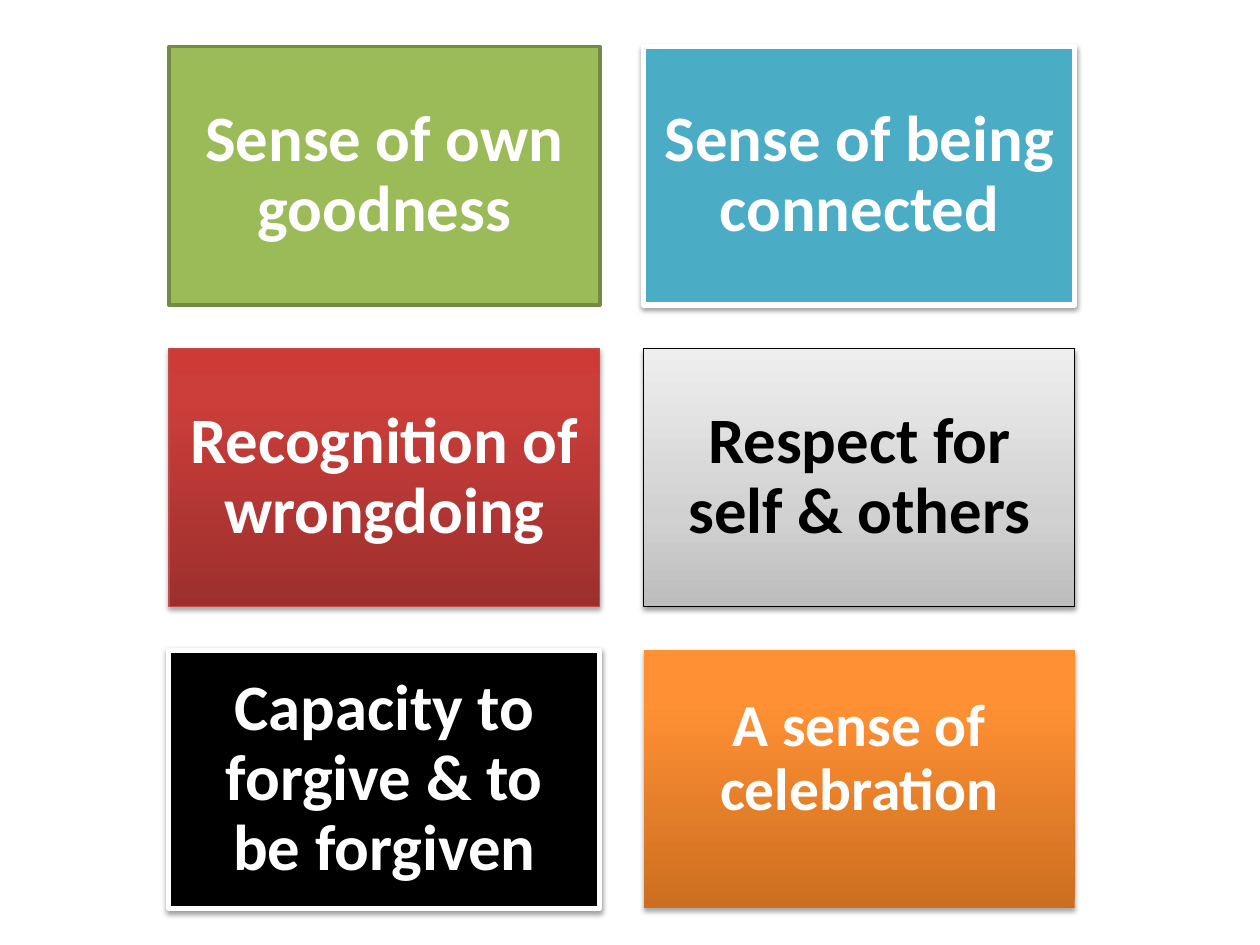
from copy import deepcopy

from lxml import etree
from pptx import Presentation
from pptx.dml.color import RGBColor
from pptx.enum.shapes import MSO_SHAPE
from pptx.enum.text import MSO_ANCHOR, PP_ALIGN
from pptx.oxml.ns import qn
from pptx.util import Inches, Pt

RECT = MSO_SHAPE.RECTANGLE
MIDDLE = MSO_ANCHOR.MIDDLE
CENTER = PP_ALIGN.CENTER

WHITE = RGBColor(0xFF, 0xFF, 0xFF)
BLACK = RGBColor(0x00, 0x00, 0x00)
GREEN = RGBColor(0x9B, 0xBB, 0x59)
DARK_GREEN = RGBColor(0x73, 0x8A, 0x42)
TEAL = RGBColor(0x4B, 0xAC, 0xC6)
RED_EDGE = RGBColor(0xBF, 0x4C, 0x48)
RED_STOPS = [(0, RGBColor(0x9C, 0x2F, 0x2D)), (0.8, RGBColor(0xCB, 0x3E, 0x3A)),
             (1, RGBColor(0xCE, 0x3B, 0x37))]
GRAY_STOPS = [(0, RGBColor(0xBD, 0xBD, 0xBD)), (0.35, RGBColor(0xD1, 0xD1, 0xD1)),
              (1, RGBColor(0xEE, 0xEE, 0xEE))]
ORANGE_STOPS = [(0, RGBColor(0xCC, 0x6E, 0x20)), (0.8, RGBColor(0xFF, 0x90, 0x34)),
                (1, RGBColor(0xFF, 0x91, 0x36))]

COLS = 2
LEFT, TOP = 1.34, 0.37
TILE_W, TILE_H = 3.42, 2.05
STEP_X, STEP_Y = 3.77, 2.395
SOFT = {"alpha": 38, "dist": 1.6}
DEEP = {"alpha": 35, "dist": 1.8}

TILES = [
    {"text": "Sense of own goodness", "fill": GREEN, "line": (DARK_GREEN, 2)},
    {"text": "Sense of being connected", "fill": TEAL, "line": (WHITE, 3), "shadow": SOFT},
    {"text": "Recognition of wrongdoing", "fill": RED_STOPS, "line": (RED_EDGE, 0.75),
     "shadow": DEEP},
    {"text": "Respect for self & others", "fill": GRAY_STOPS, "line": (BLACK, 0.75),
     "shadow": SOFT, "color": BLACK},
    {"text": "Capacity to forgive & to be forgiven", "fill": BLACK, "line": (WHITE, 3),
     "shadow": SOFT},
    {"text": "A sense of celebration", "fill": ORANGE_STOPS, "shadow": DEEP,
     "size": 34, "inset": 0.14, "bottom": 0.46},
]


def set_attrs(obj, values):
    """Set each named attribute on an object."""
    for name, value in values.items():
        setattr(obj, name, value)


def paint_fill(s, fill):
    """Fill a shape with one colour or with a list of upward gradient stops."""
    if isinstance(fill, RGBColor):
        s.fill.solid()
        s.fill.fore_color.rgb = fill
        return
    s.fill.gradient()
    s.fill.gradient_angle = 90
    stops = s._element.spPr.find(qn("a:gradFill")).find(qn("a:gsLst"))
    while len(stops) < len(fill):
        stops.append(deepcopy(stops[0]))
    for stop, (position, color) in zip(s.fill.gradient_stops, fill):
        stop.color.rgb = color
        stop.position = position


def paint_line(s, line):
    """Outline a shape, or leave it without an outline."""
    if line is None:
        s.line.fill.background()
        return
    color, width = line
    s.line.color.rgb = color
    s.line.width = Pt(width)


def add_shadow(s, alpha, dist):
    """Give a shape a soft black shadow straight below it."""
    effects = s._element.spPr.find(qn("a:effectLst"))
    shadow = etree.SubElement(effects, qn("a:outerShdw"), blurRad=str(Pt(3.1)),
                              dist=str(Pt(dist)), dir="5400000", rotWithShape="0")
    color = etree.SubElement(shadow, qn("a:srgbClr"), val=str(BLACK))
    etree.SubElement(color, qn("a:alpha"), val=str(alpha * 1000))


def write_text(s, tile):
    """Write the bold centred label of a tile."""
    inset = Inches(tile.get("inset", 0.15))
    bottom = Inches(tile["bottom"]) if "bottom" in tile else inset
    tf = s.text_frame
    set_attrs(tf, {"word_wrap": True, "vertical_anchor": MIDDLE, "margin_left": inset,
                   "margin_right": inset, "margin_top": inset, "margin_bottom": bottom})
    p = tf.paragraphs[0]
    set_attrs(p, {"alignment": CENTER, "line_spacing": 0.9})
    r = p.add_run()
    r.text = tile["text"]
    set_attrs(r.font, {"name": "Calibri", "size": Pt(tile.get("size", 37)), "bold": True})
    r.font.color.rgb = tile.get("color", WHITE)


def add_tile(slide, index, tile):
    """Add one tile at its place in the grid."""
    row, col = divmod(index, COLS)
    s = slide.shapes.add_shape(RECT, Inches(LEFT + col * STEP_X), Inches(TOP + row * STEP_Y),
                               Inches(TILE_W), Inches(TILE_H))
    s.shadow.inherit = False
    paint_fill(s, tile["fill"])
    paint_line(s, tile.get("line"))
    if "shadow" in tile:
        add_shadow(s, **tile["shadow"])
    write_text(s, tile)


def main():
    """Build the slide of six tiles and save it."""
    prs = Presentation()
    set_attrs(prs, {"slide_width": Inches(10), "slide_height": Inches(7.5)})
    slide = prs.slides.add_slide(prs.slide_layouts[6])
    for index, tile in enumerate(TILES):
        add_tile(slide, index, tile)
    prs.save("out.pptx")


if __name__ == "__main__":
    main()
